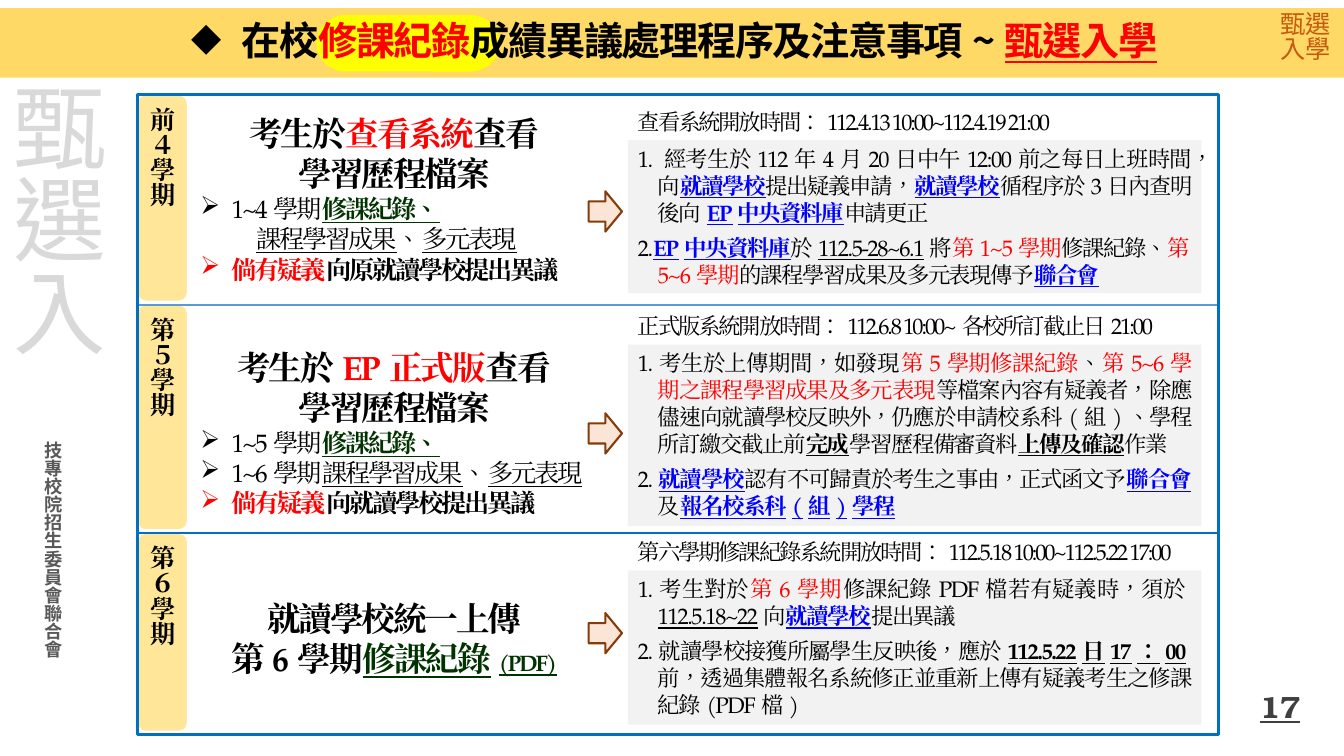
from dataclasses import dataclass

from lxml import etree
from pptx import Presentation
from pptx import util as u
from pptx.dml.color import RGBColor
from pptx.enum import shapes, text
from pptx.oxml.ns import qn

Pt = u.Pt
PRESET = shapes.MSO_SHAPE
LEFT, CENTER, RIGHT, JUSTIFY = (text.PP_ALIGN.LEFT, text.PP_ALIGN.CENTER,
                                text.PP_ALIGN.RIGHT, text.PP_ALIGN.JUSTIFY)
MIDDLE = text.MSO_ANCHOR.MIDDLE


@dataclass(frozen=True)
class Theme:
    body_font: str = "TeX Gyre Pagella"
    title_font: str = "Noto Sans CJK SC"
    side_font: str = "Noto Sans CJK JP"
    number_font: str = "TeX Gyre Bonum"
    black: str = "000000"
    red: str = "FF0000"
    blue: str = "0000FF"
    green: str = "003300"
    band: str = "FFD966"
    label: str = "FFE699"
    white: str = "FFFFFF"
    note: str = "F2F2F2"
    arrow: str = "FBE5D6"
    arrow_line: str = "843C0B"
    frame: str = "0070C0"
    divider: str = "5B9BD5"
    highlight: str = "FFFF00"
    orange: str = "C55A11"
    pale: str = "D9D9D9"
    grey: str = "595959"
    dark: str = "404040"
    watchword: int = 66
    title: int = 28
    heading: int = 24
    number: int = 22
    item: int = 18
    small: int = 16
    side: int = 13


T = Theme()

# Run styles: colour, bold, underlined
STYLES = {"": (T.black, False, False), "bold": (T.black, True, False),
          "under": (T.black, False, True), "strong": (T.black, True, True),
          "red": (T.red, False, False), "alert": (T.red, True, False),
          "title": (T.red, True, True), "key": (T.blue, True, True),
          "record": (T.green, True, True), "orange": (T.orange, False, False),
          "pale": (T.pale, False, False), "grey": (T.grey, True, False),
          "page": (T.dark, True, True)}


def add_paragraph(frame, first, runs, size, font=T.body_font, align=LEFT, spacing=0,
                  before=0, left=0, hang=0, bullet=None, lines=None):
    """Runs are (wording, style) or (wording, style, size)."""
    paragraph = frame.paragraphs[0] if first else frame.add_paragraph()
    paragraph.alignment = align
    if before and not first:
        paragraph.space_before = Pt(before)
    if lines:
        paragraph.line_spacing = lines
    properties = paragraph._p.get_or_add_pPr()
    properties.set("marL", str(Pt(left)))
    properties.set("indent", str(Pt(-hang)))
    if bullet:
        etree.SubElement(properties, qn("a:buChar")).set("char", bullet)
    for wording, style, *own_size in runs:
        run = paragraph.add_run()
        run.text = wording
        color, run.font.bold, run.font.underline = STYLES[style]
        run.font.size = Pt(own_size[0] if own_size else size)
        run.font.name = font
        run.font.color.rgb = RGBColor.from_string(color)
        run_properties = run._r.get_or_add_rPr()
        run_properties.set("lang", "zh-TW")
        run_properties.set("spc", str(int(spacing * 100)))
        etree.SubElement(run_properties, qn("a:ea")).set("typeface", font)


def add_text(slide, box, paragraphs, size, anchor=None, vertical=False, inset=None,
             wrap=True, **options):
    """Paragraphs are lists of runs, or (runs, options) pairs."""
    shape = slide.shapes.add_textbox(*map(Pt, box))
    return fill_text(shape, paragraphs, size, anchor, vertical, inset, wrap, **options)


def fill_text(shape, paragraphs, size, anchor=None, vertical=False, inset=None,
              wrap=True, **options):
    frame = shape.text_frame
    frame.word_wrap = wrap
    frame.vertical_anchor = anchor or text.MSO_ANCHOR.TOP
    if vertical:
        frame._txBody.bodyPr.set("vert", "eaVert")
    if inset is not None:
        frame.margin_left = frame.margin_right = Pt(inset)
        frame.margin_top = frame.margin_bottom = Pt(inset)
    for index, entry in enumerate(paragraphs):
        runs, own = entry if isinstance(entry, tuple) else (entry, {})
        add_paragraph(frame, index == 0, runs, **{"size": size, **options, **own})
    return shape


def add_block(slide, preset, box, fill=None, line=None, width=1):
    shape = slide.shapes.add_shape(preset, *map(Pt, box))
    shape.shadow.inherit = False
    if fill:
        shape.fill.solid()
        shape.fill.fore_color.rgb = RGBColor.from_string(fill)
    else:
        shape.fill.background()
    if line:
        shape.line.color.rgb = RGBColor.from_string(line)
        shape.line.width = Pt(width)
    else:
        shape.line.fill.background()
    return shape


def add_divider(slide, x, y, width, color):
    line = slide.shapes.add_connector(shapes.MSO_CONNECTOR.STRAIGHT,
                                      Pt(x), Pt(y), Pt(x + width), Pt(y))
    line.line.color.rgb = RGBColor.from_string(color)
    line.line.width = Pt(1.5)
    etree.SubElement(line._element.spPr, qn("a:effectLst"))


# Title band with corner tag
def draw_header(slide, box):
    x, y, width, height = box
    add_block(slide, PRESET.RECTANGLE, box, T.band)
    add_text(slide, (x + width - 53, y, 51, 51), [[("甄選", "orange")], [("入學", "orange")]],
             T.item, font=T.side_font, align=CENTER, wrap=False, lines=0.83)
    add_block(slide, PRESET.FLOWCHART_TERMINATOR, (x + 226, y + 5, 131, 40.3), T.highlight)
    add_text(slide, (x + 3, y + 8, width - 3, 34),
             [[("在校", "bold"), ("修課紀錄", "alert"),
               ("成績異議處理程序及注意事項~", "bold"), ("甄選入學", "title")]],
             T.title, MIDDLE, font=T.title_font, align=CENTER, spacing=-1,
             left=36, hang=36, bullet="◆", lines=0.9)


# Vertical wording in the left margin
def draw_margin(slide, box):
    x, y, width, height = box
    add_text(slide, (x + 3, y + 4, width - 18, 271), [[("甄選入", "pale")]], T.watchword,
             MIDDLE, vertical=True, inset=0, font=T.title_font)
    add_text(slide, (x + 19.5, y + 254, 30, 184), [[("技專校院招生委員會聯合會", "grey")]],
             T.side, vertical=True, font=T.side_font, align=CENTER)


# One semester: label, summary, arrow, opening time and notes
def draw_semester(slide, box, row):
    x, y, width, height = box
    label = add_block(slide, PRESET.ROUNDED_RECTANGLE, (x, y, 36, height - 2.5),
                      T.label, T.white)
    fill_text(label, [[(row["label"], "bold")]], T.item, MIDDLE, vertical=True)
    add_text(slide, (x + 38, y + row["summary_y"], 291, height - row["summary_y"] - 5),
             row["summary"], T.item, spacing=-1.5)
    add_block(slide, PRESET.RIGHT_ARROW, (x + 322.5, y + row["arrow_y"], 23.8, 28.8),
              T.arrow, T.arrow_line, 1.5)
    add_text(slide, (x + 350.5, y + row["time_y"], 422, 26.6), [[(row["time"], "")]],
             T.small, align=JUSTIFY, spacing=-1.5)
    top, note_height = row["notes_box"]
    notes = add_block(slide, PRESET.RECTANGLE, (x + 350.5, y + top, 409.7, note_height), T.note)
    fill_text(notes, row["notes"], T.small, align=JUSTIFY, spacing=-1,
              before=6, left=14.4, hang=14.4)


HEADING = {"size": T.heading, "align": CENTER}
ITEM = {"left": 22.3, "hang": 22.3, "bullet": "➢"}
OUTCOMES = [("課程學習成果", "under"), ("、", ""), ("多元表現", "under")]
FILES = ([("學習歷程檔案", "bold")], HEADING)

SEMESTERS = [
    dict(label="前４學期", height=150, summary_y=9.3, arrow_y=69, time_y=5.7, notes_box=(32.4, 109.4),
         summary=[([("考生於", "bold"), ("查看系統", "alert"), ("查看", "bold")], HEADING), FILES,
                  ([("1~4學期", ""), ("修課紀錄、", "record")], ITEM), (OUTCOMES, {"left": 40}),
                  ([("倘有疑義", "alert"), ("向原就讀學校提出異議", "bold")], ITEM)],
         time="查看系統開放時間：112.4.13 10:00~112.4.19 21:00",
         notes=[[("1. 經考生於112年4月20日中午12:00前之每日上班時間，向", ""), ("就讀學校", "key"),
                 ("提出疑義申請，", ""), ("就讀學校", "key"), ("循程序於3日內查明後向", ""),
                 ("EP中央資料庫", "key"), ("申請更正", "")],
                ([("2.", ""), ("EP中央資料庫", "key"), ("於", ""), ("112.5-28~6.1", "under"),
                  ("將", ""), ("第1~5學期", "red"), ("修課紀錄、", ""), ("第5~6學期", "red"),
                  ("的課程學習成果及多元表現傳予", ""), ("聯合會", "key")], {"align": LEFT})]),
    dict(label="第５學期", height=163.2, summary_y=26.4, arrow_y=77.5, time_y=1.9, notes_box=(28.5, 129.6),
         summary=[([("考生於", "bold"), ("EP正式版", "alert"), ("查看", "bold")], HEADING), FILES,
                  ([("1~5學期", ""), ("修課紀錄、", "record")], ITEM),
                  ([("1~6學期", ""), *OUTCOMES], ITEM),
                  ([("倘有疑義", "alert"), ("向就讀學校提出異議", "bold")], ITEM)],
         time="正式版系統開放時間：112.6.8 10:00~各校所訂截止日21:00",
         notes=[[("1.考生於上傳期間，如發現", ""), ("第5學期修課紀錄", "red"), ("、", ""),
                 ("第5~6學期之課程學習成果及多元表現", "red"),
                 ("等檔案內容有疑義者，除應儘速向就讀學校反映外，仍應於申請校系科(組)、學程所訂繳交截止前", ""),
                 ("完成", "strong"), ("學習歷程備審資料", ""), ("上傳及確認", "strong"), ("作業", "")],
                [("2.", ""), ("就讀學校", "key"), ("認有不可歸責於考生之事由，正式函文予", ""),
                 ("聯合會", "key"), ("及", ""), ("報名校系科(組)學程", "key")]]),
    dict(label="第６學期", height=144, summary_y=42.5, arrow_y=57, time_y=0, notes_box=(26.6, 110.2),
         summary=[([("就讀學校統一上傳", "bold")], HEADING),
                  ([("第6學期", "bold"), ("修課紀錄", "record"), ("(PDF)", "record", T.small)], HEADING)],
         time="第六學期修課紀錄系統開放時間：112.5.18 10:00~112.5.22 17:00",
         notes=[[("1.考生對於", ""), ("第6學期", "red"), ("修課紀錄PDF檔若有疑義時，須於", ""),
                 ("112.5.18~22", "under"), ("向", ""), ("就讀學校", "key"), ("提出異議", "")],
                [("2.就讀學校接獲所屬學生反映後，應於", ""), ("112.5.22日17：00", "strong"),
                 ("前，透過集體報名系統修正並重新上傳有疑義考生之修課紀錄(PDF檔)", "")]]),
]


# Framed panel with one row per semester
def draw_panel(slide, box):
    x, y, width, height = box
    row_y = y
    for row, divider in zip(SEMESTERS, (None, T.divider, T.frame)):
        draw_semester(slide, (x, row_y, width, row["height"]), row)
        if divider:
            add_divider(slide, x, row_y, width, divider)
        row_y += row["height"]
    add_block(slide, PRESET.RECTANGLE, box, line=T.frame, width=2.25)


def main():
    presentation = Presentation()
    presentation.slide_width, presentation.slide_height = Pt(960), Pt(540)
    slide = presentation.slides.add_slide(presentation.slide_layouts[6])
    draw_header(slide, (0, 5.8, 960, 49.7))
    draw_margin(slide, (0, 54, 92, 460))
    draw_panel(slide, (98, 67.7, 772.5, 457.2))
    add_text(slide, (720, 490.3, 216, 28.8), [[("17", "page")]], T.number, MIDDLE,
             font=T.number_font, align=RIGHT)
    presentation.save("out.pptx")


if __name__ == "__main__":
    main()
